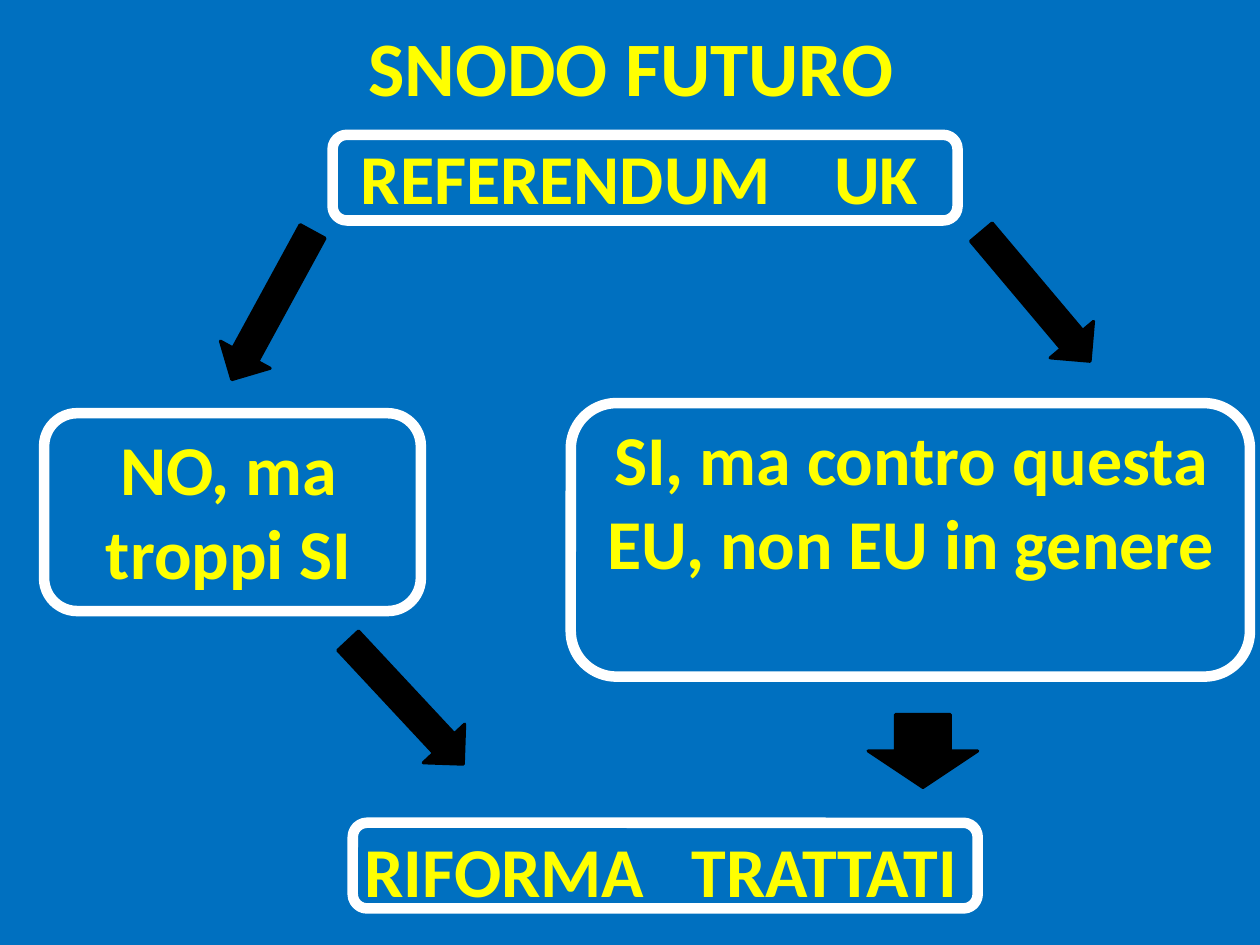
from dataclasses import dataclass

from pptx import Presentation
from pptx.dml.color import RGBColor
from pptx.enum.shapes import MSO_SHAPE
from pptx.enum.text import MSO_ANCHOR, PP_ALIGN
from pptx.util import Inches, Pt

ROUNDED = MSO_SHAPE.ROUNDED_RECTANGLE
RIGHT_ARROW = MSO_SHAPE.RIGHT_ARROW
DOWN_ARROW = MSO_SHAPE.DOWN_ARROW
CENTER = PP_ALIGN.CENTER
MIDDLE = MSO_ANCHOR.MIDDLE
TITLE_ONLY = 5


@dataclass(frozen=True)
class Theme:
    background: RGBColor = RGBColor(0x00, 0x70, 0xC0)
    text: RGBColor = RGBColor(0xFF, 0xFF, 0x00)
    frame: RGBColor = RGBColor(0xFF, 0xFF, 0xFF)
    arrow: RGBColor = RGBColor(0x00, 0x00, 0x00)
    font: str = "Calibri"
    title_size: float = 44
    label_size: float = 40
    frame_width: float = 6
    arrow_width: float = 1.75


@dataclass(frozen=True)
class Area:
    left: float
    top: float
    width: float
    height: float

    def lengths(self) -> tuple:
        return tuple(map(Inches, (self.left, self.top, self.width, self.height)))


@dataclass(frozen=True)
class Step:
    """A framed label; word_gap is extra points between its words."""
    words: tuple
    text_area: Area
    frame_area: Area
    word_gap: float = 0


@dataclass(frozen=True)
class Arrow:
    area: Area
    rotation: float = 0
    preset: MSO_SHAPE = RIGHT_ARROW


THEME = Theme()

STEPS = (
    Step(("REFERENDUM", "UK"), Area(2.4, 1.02, 5.35, 1.31),
         Area(2.64, 1.07, 4.96, 0.68), word_gap=27),
    Step(("NO, ma troppi SI",), Area(0.28, 3.33, 3.07, 1.45),
         Area(0.35, 3.28, 2.99, 1.57)),
    Step(("RIFORMA", "TRATTATI"), Area(2.57, 6.52, 5.35, 0.77),
         Area(2.8, 6.53, 4.96, 0.68), word_gap=18),
    Step(("SI, ma contro questa EU, non EU in genere",),
         Area(4.61, 3.25, 5.24, 2.12), Area(4.53, 3.2, 5.39, 2.17)),
)

ARROWS = (
    Arrow(Area(1.49, 2.2, 1.34, 0.45), 118.6),
    Arrow(Area(7.55, 2.13, 1.34, 0.45), 49.9),
    Arrow(Area(2.55, 5.35, 1.34, 0.45), 47),
    Arrow(Area(6.89, 5.67, 0.87, 0.58), preset=DOWN_ARROW),
)


def add_span(para, text: str, size: float):
    span = para.add_run()
    span.text = text
    span.font.name = THEME.font
    span.font.size = Pt(size)
    span.font.bold = True
    span.font.color.rgb = THEME.text
    return span


def add_title(page, text: str) -> None:
    title = page.shapes.title
    title.left, title.top, title.width, title.height = Area(0.51, -0.1, 9, 1.25).lengths()
    title.text_frame.vertical_anchor = MIDDLE
    para = title.text_frame.paragraphs[0]
    para.alignment = CENTER
    add_span(para, text, THEME.title_size)


def add_step(page, step: Step) -> None:
    shapes = page.shapes.add_group_shape().shapes
    box = shapes.add_textbox(*step.text_area.lengths())
    box.text_frame.word_wrap = True
    para = box.text_frame.paragraphs[0]
    para.alignment = CENTER
    for index, word in enumerate(step.words):
        if index:
            space = add_span(para, " ", THEME.label_size)
            space.font._element.set("spc", str(int(step.word_gap * 100)))
        add_span(para, word, THEME.label_size)

    frame = shapes.add_shape(ROUNDED, *step.frame_area.lengths())
    frame.shadow.inherit = False
    frame.fill.background()
    frame.line.color.rgb = THEME.frame
    frame.line.width = Pt(THEME.frame_width)


def add_arrow(page, arrow: Arrow) -> None:
    shape = page.shapes.add_shape(arrow.preset, *arrow.area.lengths())
    shape.rotation = arrow.rotation
    shape.shadow.inherit = False
    shape.fill.solid()
    shape.fill.fore_color.rgb = THEME.arrow
    shape.line.color.rgb = THEME.arrow
    shape.line.width = Pt(THEME.arrow_width)


def main() -> None:
    deck = Presentation()
    deck.slide_width, deck.slide_height = Inches(10), Inches(7.5)
    page = deck.slides.add_slide(deck.slide_layouts[TITLE_ONLY])
    page.background.fill.solid()
    page.background.fill.fore_color.rgb = THEME.background

    add_title(page, "SNODO FUTURO")
    for step in STEPS:
        add_step(page, step)
    for arrow in ARROWS:
        add_arrow(page, arrow)
    deck.save("out.pptx")


if __name__ == "__main__":
    main()
